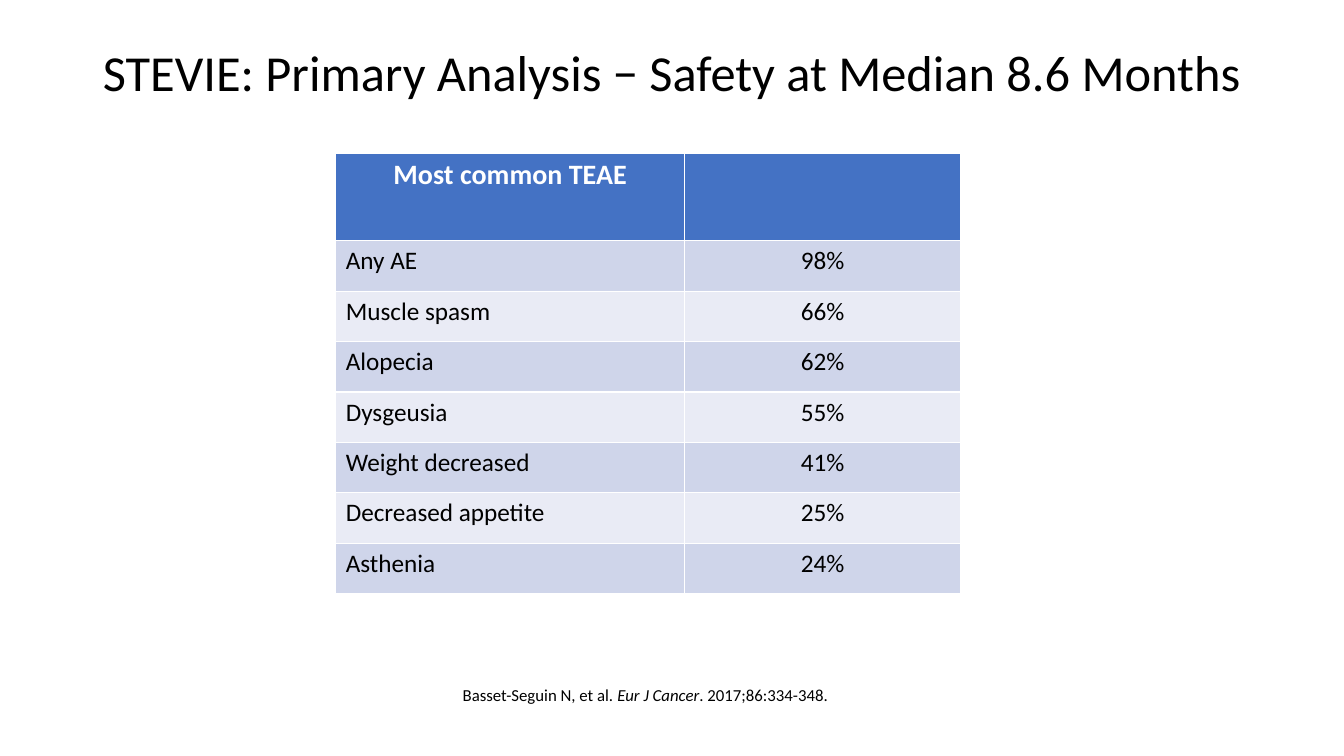
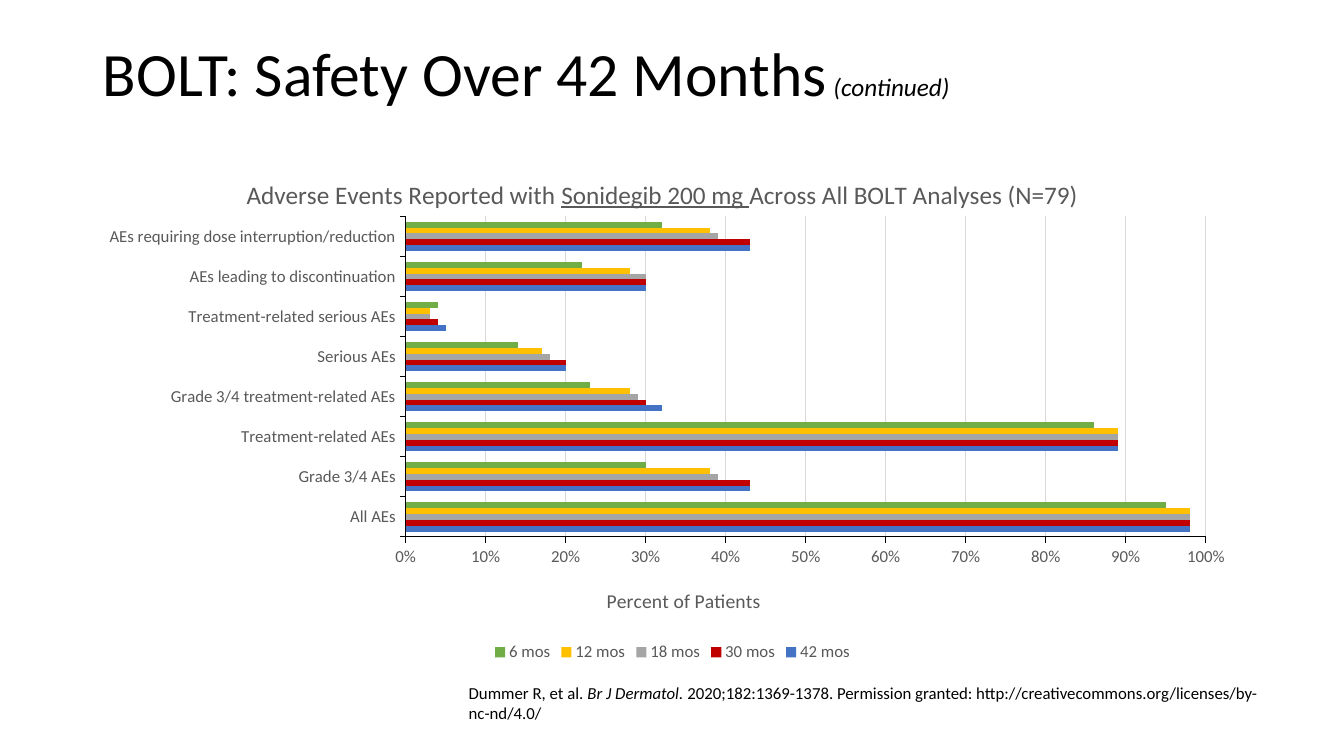
import pptx
import pptx.util
import pptx.chart.data
import pptx.dml.color
import pptx.enum.chart
import pptx.enum.text
import pptx.oxml
import pptx.oxml.ns

Inches, Pt = pptx.util.Inches, pptx.util.Pt
ALIGN = pptx.enum.text.PP_ALIGN

# Shared style
FONT = "Calibri"
COLORS = {
    "text": "000000", "white": "FFFFFF", "muted": "595959", "grid": "D9D9D9",
    "header": "4472C4", "band_dark": "CFD5EA", "band_light": "E9EBF5",
}
MARGIN, CONTENT_WIDTH, TITLE_HEIGHT = 0.92, 11.5, 1.45

# Content: text runs are (text, style) pairs
SAFETY_TITLE = [("STEVIE: Primary Analysis − Safety at Median 8.6 Months", {"size": 36})]
SAFETY_SOURCE = [
    ("Basset-Seguin N, et al. ", {}),
    ("Eur J Cancer", {"italic": True}),
    (". 2017;86:334-348.", {}),
]
SAFETY_ROWS = [
    ("Most common TEAE", ""),
    ("Any AE", "98%"),
    ("Muscle spasm", "66%"),
    ("Alopecia", "62%"),
    ("Dysgeusia", "55%"),
    ("Weight decreased", "41%"),
    ("Decreased appetite", "25%"),
    ("Asthenia", "24%"),
]
COLUMN_WIDTHS = (3.46, 2.74)
HEADER_HEIGHT, ROW_HEIGHT = 0.87, 0.5

BOLT_TITLE = [
    ("BOLT: Safety Over 42 Months", {"size": 44}),
    (" ", {"size": 18}),
    ("(continued)", {"size": 18, "italic": True}),
]
BOLT_SOURCE = [
    ("Dummer R, et al. ", {}),
    ("Br J Dermatol. ", {"italic": True}),
    ("2020;182:1369-1378. Permission granted: "
     "http://creativecommons.org/licenses/by-nc-nd/4.0/", {}),
]
CHART_TITLE = [
    ("Adverse Events Reported with ", {}),
    ("Sonidegib 200 mg ", {"underline": True}),
    ("Across All BOLT Analyses (N=79)", {}),
]
AXIS_TITLE = [("Percent of Patients", {})]
CATEGORIES = [
    "All AEs", "Grade 3/4 AEs", "Treatment-related AEs",
    "Grade 3/4 treatment-related AEs", "Serious AEs",
    "Treatment-related serious AEs", "AEs leading to discontinuation",
    "AEs requiring dose interruption/reduction",
]
SERIES = [
    ("42 mos", "4472C4", (0.98, 0.43, 0.89, 0.32, 0.2, 0.05, 0.3, 0.43)),
    ("30 mos", "C00000", (0.98, 0.43, 0.89, 0.3, 0.2, 0.04, 0.3, 0.43)),
    ("18 mos", "A5A5A5", (0.98, 0.39, 0.89, 0.29, 0.18, 0.03, 0.3, 0.39)),
    ("12 mos", "FFC000", (0.98, 0.38, 0.89, 0.28, 0.17, 0.03, 0.28, 0.38)),
    ("6 mos", "70AD47", (0.95, 0.3, 0.86, 0.23, 0.14, 0.04, 0.22, 0.32)),
]


def rgb(value):
    return pptx.dml.color.RGBColor.from_string(value)


def style_font(font, size, color="text", **flags):
    font.name, font.size = FONT, Pt(size)
    font.color.rgb = rgb(COLORS[color])
    for name, value in flags.items():
        setattr(font, name, value)


def write_runs(paragraph, runs, size=12, color="text"):
    for text, style in runs:
        run = paragraph.add_run()
        run.text = text
        style_font(run.font, **{"size": size, "color": color, **style})


def add_titled_slide(presentation, runs, top, line_spacing):
    slide = presentation.slides.add_slide(presentation.slide_layouts[5])
    title = slide.shapes.title
    title.left, title.top = Inches(MARGIN), Inches(top)
    title.width, title.height = Inches(CONTENT_WIDTH), Inches(TITLE_HEIGHT)
    title.text_frame.vertical_anchor = pptx.enum.text.MSO_ANCHOR.MIDDLE
    paragraph = title.text_frame.paragraphs[0]
    paragraph.alignment = ALIGN.LEFT
    paragraph.line_spacing = line_spacing
    write_runs(paragraph, runs)
    return slide


def add_source(slide, runs, left, top, width, height, wrap):
    box = slide.shapes.add_textbox(Inches(left), Inches(top), Inches(width), Inches(height))
    box.text_frame.word_wrap = wrap
    write_runs(box.text_frame.paragraphs[0], runs)


def add_safety_table(slide):
    heights = [HEADER_HEIGHT] + [ROW_HEIGHT] * (len(SAFETY_ROWS) - 1)
    table = slide.shapes.add_table(
        len(SAFETY_ROWS), len(COLUMN_WIDTHS), Inches(3.33), Inches(1.52),
        Inches(sum(COLUMN_WIDTHS)), Inches(sum(heights))).table
    for column, width in zip(table.columns, COLUMN_WIDTHS):
        column.width = Inches(width)
    for row_index, values in enumerate(SAFETY_ROWS):
        table.rows[row_index].height = Inches(heights[row_index])
        is_header = row_index == 0
        fill = "header" if is_header else ("band_light", "band_dark")[row_index % 2]
        for column_index, value in enumerate(values):
            cell = table.cell(row_index, column_index)
            cell.fill.solid()
            cell.fill.fore_color.rgb = rgb(COLORS[fill])
            cell.text = value
            paragraph = cell.text_frame.paragraphs[0]
            centered = is_header or column_index == 1
            paragraph.alignment = ALIGN.CENTER if centered else ALIGN.LEFT
            style_font(paragraph.font, 20 if is_header else 18,
                       "white" if is_header else "text", bold=is_header)
            for run in paragraph.runs:
                style_font(run.font, 20 if is_header else 18,
                           "white" if is_header else "text", bold=is_header)


def set_layout(parent, successors, inner=False, **fractions):
    """Place a chart part by fractions of the chart area."""
    for old in parent.findall(pptx.oxml.ns.qn("c:layout")):
        parent.remove(old)
    target = '<c:layoutTarget val="inner"/>' if inner else ""
    modes = '<c:xMode val="edge"/><c:yMode val="edge"/>'
    values = "".join(f'<c:{name} val="{value}"/>' for name, value in fractions.items())
    layout = pptx.oxml.parse_xml(
        f'<c:layout {pptx.oxml.ns.nsdecls("c")}><c:manualLayout>'
        f"{target}{modes}{values}</c:manualLayout></c:layout>")
    parent.insert_element_before(layout, *successors)


def write_chart_title(owner, runs, size, x, y):
    title = owner.chart_title if hasattr(owner, "chart_title") else owner.axis_title
    paragraph = title.text_frame.paragraphs[0]
    paragraph.font.bold = False
    write_runs(paragraph, [(text, {"bold": False, **style}) for text, style in runs],
               size, "muted")
    element = title.text_frame.paragraphs[0]._p.getparent().getparent().getparent()
    set_layout(element, ("c:overlay", "c:spPr", "c:txPr"), x=x, y=y)


def add_safety_chart(slide):
    data = pptx.chart.data.CategoryChartData(number_format="0%")
    data.categories = CATEGORIES
    for name, _, values in SERIES:
        data.add_series(name, values)
    chart = slide.shapes.add_chart(
        pptx.enum.chart.XL_CHART_TYPE.BAR_CLUSTERED, Inches(MARGIN), Inches(1.48),
        Inches(CONTENT_WIDTH), Inches(5.13), data).chart
    style_font(chart.font, 10)

    # Bars
    plot = chart.plots[0]
    plot.gap_width, plot.overlap, plot.vary_by_categories = 182, 0, False
    for series, (_, color, _) in zip(plot.series, SERIES):
        series.format.fill.solid()
        series.format.fill.fore_color.rgb = rgb(color)

    # Axes
    for axis in (chart.category_axis, chart.value_axis):
        style_font(axis.tick_labels.font, 12, "muted")
        axis.major_tick_mark = pptx.enum.chart.XL_TICK_MARK.OUTSIDE
        axis.format.line.color.rgb = rgb(COLORS["text"])
        axis.format.line.width = Pt(0.75)
    value_axis = chart.value_axis
    value_axis.minimum_scale, value_axis.maximum_scale, value_axis.major_unit = 0, 1, 0.1
    value_axis.tick_labels.number_format = "0%"
    value_axis.tick_labels.number_format_is_linked = False
    grid_line = value_axis.major_gridlines.format.line
    grid_line.color.rgb, grid_line.width = rgb(COLORS["grid"]), Pt(0.75)

    # Titles, legend and plot position
    write_chart_title(chart, CHART_TITLE, 18, 0.13, 0.05)
    write_chart_title(value_axis, AXIS_TITLE, 14, 0.44, 0.84)
    chart.has_legend = True
    chart.legend.position = pptx.enum.chart.XL_LEGEND_POSITION.BOTTOM
    chart.legend.include_in_layout = False
    style_font(chart.legend.font, 12, "muted")
    plot_area = plot._element.getparent()
    set_layout(plot_area, ("c:barChart",), inner=True, x=0.27, y=0.13, w=0.69, h=0.62)


def main():
    presentation = pptx.Presentation()
    presentation.slide_width, presentation.slide_height = Inches(13.33), Inches(7.5)

    # Primary analysis table
    slide = add_titled_slide(presentation, SAFETY_TITLE, 0.06, Pt(32))
    add_safety_table(slide)
    add_source(slide, SAFETY_SOURCE, 4.49, 6.74, 3.88, 0.3, wrap=False)

    # Adverse events over time
    slide = add_titled_slide(presentation, BOLT_TITLE, 0.03, 0.9)
    add_safety_chart(slide)
    add_source(slide, BOLT_SOURCE, 4.55, 6.72, 8.16, 0.5, wrap=True)

    presentation.save("out.pptx")


if __name__ == "__main__":
    main()
